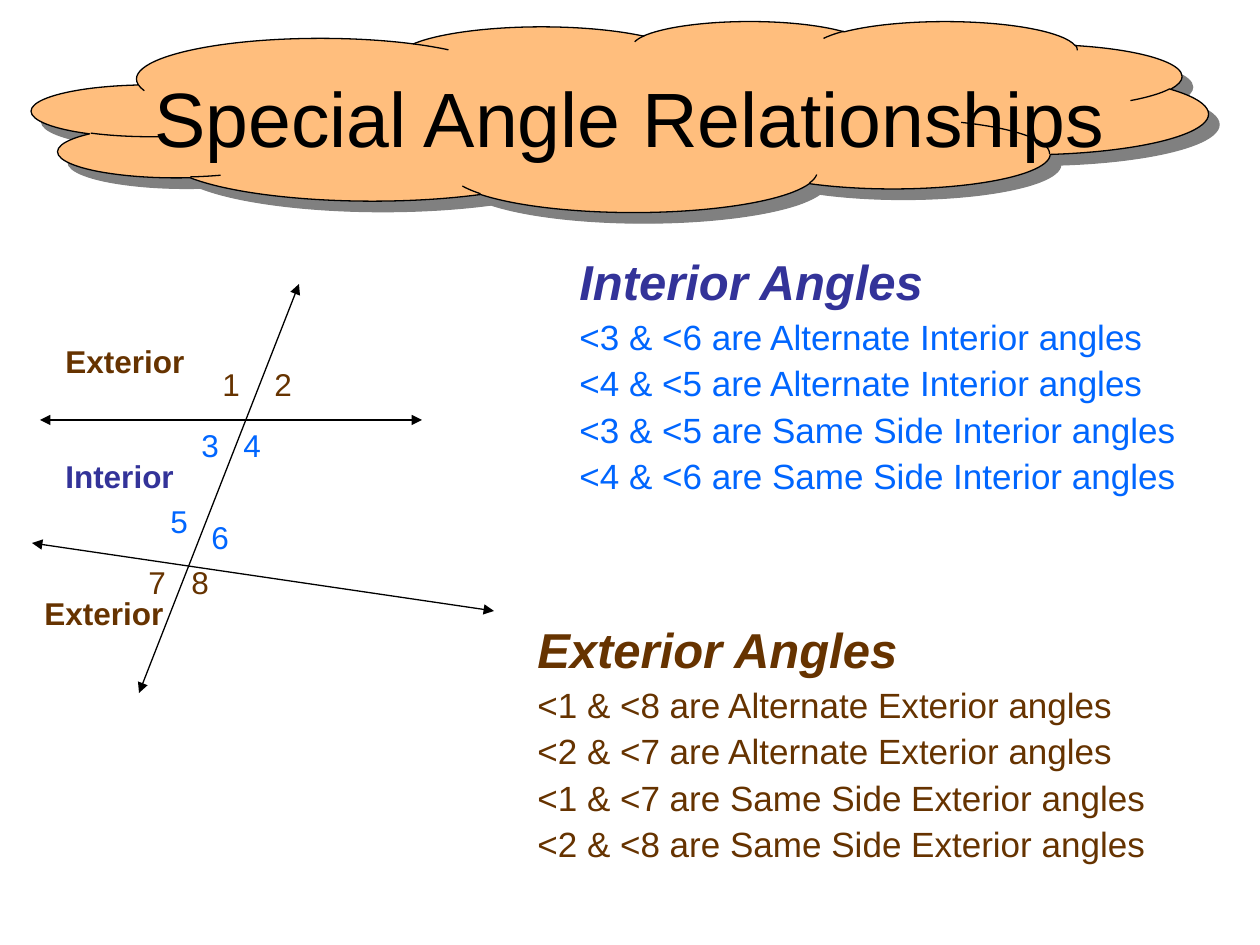
import dataclasses
import lxml.etree
import pptx
import pptx.dml.color
import pptx.enum.shapes
import pptx.enum.text
import pptx.oxml.ns
import pptx.util

qn = pptx.oxml.ns.qn


@dataclasses.dataclass(frozen=True)
class Theme:
    font: str = "Arial"
    black: str = "000000"
    cloud: str = "FFBE7D"
    shade: str = "808080"
    navy: str = "333399"
    blue: str = "0066FF"
    brown: str = "663300"
    title: int = 44
    head: int = 28
    body: int = 20
    label: int = 18
    line: float = 0.75


class Board:
    """Draws styled elements on one slide, with lengths in px."""

    def __init__(self, slide, theme):
        self.slide = slide
        self.theme = theme

    @staticmethod
    def px(n):
        return pptx.util.Emu(round(n * 914400 / 126))

    @staticmethod
    def rgb(code):
        return pptx.dml.color.RGBColor.from_string(code)

    def edge(self, line):
        line.color.rgb = self.rgb(self.theme.black)
        line.width = pptx.util.Pt(self.theme.line)

    def cloud(self, *box):
        kind = pptx.enum.shapes.MSO_SHAPE.CLOUD
        shape = self.slide.shapes.add_shape(kind, *map(self.px, box))
        shape.fill.solid()
        shape.fill.fore_color.rgb = self.rgb(self.theme.cloud)
        self.edge(shape.line)
        shape.shadow.inherit = False
        effects = shape.element.spPr.find(qn("a:effectLst"))
        shadow = lxml.etree.SubElement(
            effects, qn("a:outerShdw"), dist=str(int(pptx.util.Pt(8.5))),
            dir="2700000", algn="ctr", rotWithShape="0")
        lxml.etree.SubElement(shadow, qn("a:srgbClr"), val=self.theme.shade)

    def arrow(self, *ends):
        kind = pptx.enum.shapes.MSO_CONNECTOR.STRAIGHT
        arrow = self.slide.shapes.add_connector(kind, *map(self.px, ends))
        self.edge(arrow.line)
        props = arrow.element.spPr
        for end in ("a:headEnd", "a:tailEnd"):
            lxml.etree.SubElement(props.find(qn("a:ln")), qn(end), type="triangle")
        lxml.etree.SubElement(props, qn("a:effectLst"))

    def frame(self, *box):
        frame = self.slide.shapes.add_textbox(*map(self.px, box)).text_frame
        frame.word_wrap = True
        return frame

    def put(self, para, text, size, color, bold=False, slant=False):
        para.text = text
        font = para.font
        font.name = self.theme.font
        font.size = pptx.util.Pt(size)
        font.color.rgb = self.rgb(color)
        font.bold = bold
        font.italic = slant

    def title(self, text, *box):
        frame = self.frame(*box)
        frame.vertical_anchor = pptx.enum.text.MSO_ANCHOR.MIDDLE
        para = frame.paragraphs[0]
        para.alignment = pptx.enum.text.PP_ALIGN.CENTER
        self.put(para, text, self.theme.title, self.theme.black)

    def label(self, text, left, top, width, color, bold=False):
        frame = self.frame(left, top, width, 50)
        frame.auto_size = pptx.enum.text.MSO_AUTO_SIZE.SHAPE_TO_FIT_TEXT
        self.put(frame.paragraphs[0], text, self.theme.label, color, bold)

    def rules(self, left, top, head, lines, tint, color):
        frame = self.frame(left, top, 735, 267)
        self.put(frame.paragraphs[0], head, self.theme.head, tint, True, True)
        for line in lines:
            self.put(frame.add_paragraph(), line, self.theme.body, color)
        for para in frame.paragraphs:
            para.line_spacing = 0.9
            para.space_before = pptx.util.Pt(5)


def main():
    deck = pptx.Presentation()
    deck.slide_width = Board.px(1260)
    deck.slide_height = Board.px(945)
    theme = Theme()
    board = Board(deck.slides.add_slide(deck.slide_layouts[6]), theme)

    board.cloud(32, 21, 1176, 191)
    board.title("Special Angle Relationships", 63, 38, 1134, 157)

    for ends in ((40, 420, 422, 420), (32, 543, 494, 611), (299, 284, 139, 693)):
        board.arrow(*ends)

    spots = ((210, 359), (262, 359), (189, 420), (231, 420),
             (158, 496), (199, 512), (136, 557), (179, 557))
    for num, (left, top) in enumerate(spots, 1):
        color = theme.blue if 3 <= num <= 6 else theme.brown
        board.label(str(num), left, top, 42, color)

    board.label("Exterior", 53, 336, 199, theme.brown, True)
    board.label("Interior", 53, 451, 252, theme.navy, True)
    board.label("Exterior", 32, 588, 199, theme.brown, True)

    groups = (
        ("Interior", 567, 252, theme.navy, theme.blue,
         ((3, 6), (4, 5), (3, 5), (4, 6))),
        ("Exterior", 525, 620, theme.brown, theme.brown,
         ((1, 8), (2, 7), (1, 7), (2, 8))),
    )
    for side, left, top, tint, color, pairs in groups:
        lines = [f"<{a} & <{b} are {'Alternate' if i < 2 else 'Same Side'} {side} angles"
                 for i, (a, b) in enumerate(pairs)]
        board.rules(left, top, f"{side} Angles", lines, tint, color)

    deck.save("out.pptx")


if __name__ == "__main__":
    main()
